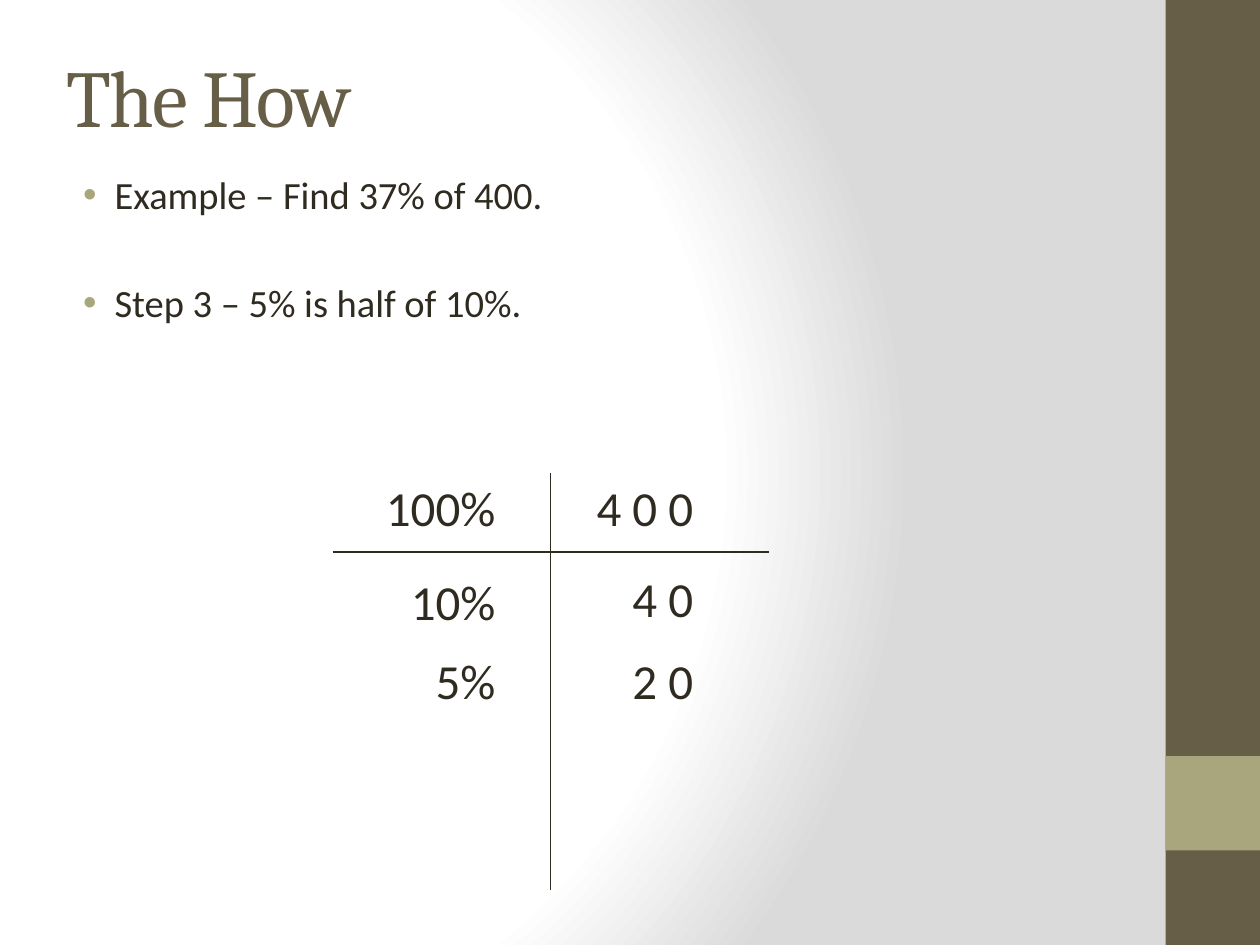
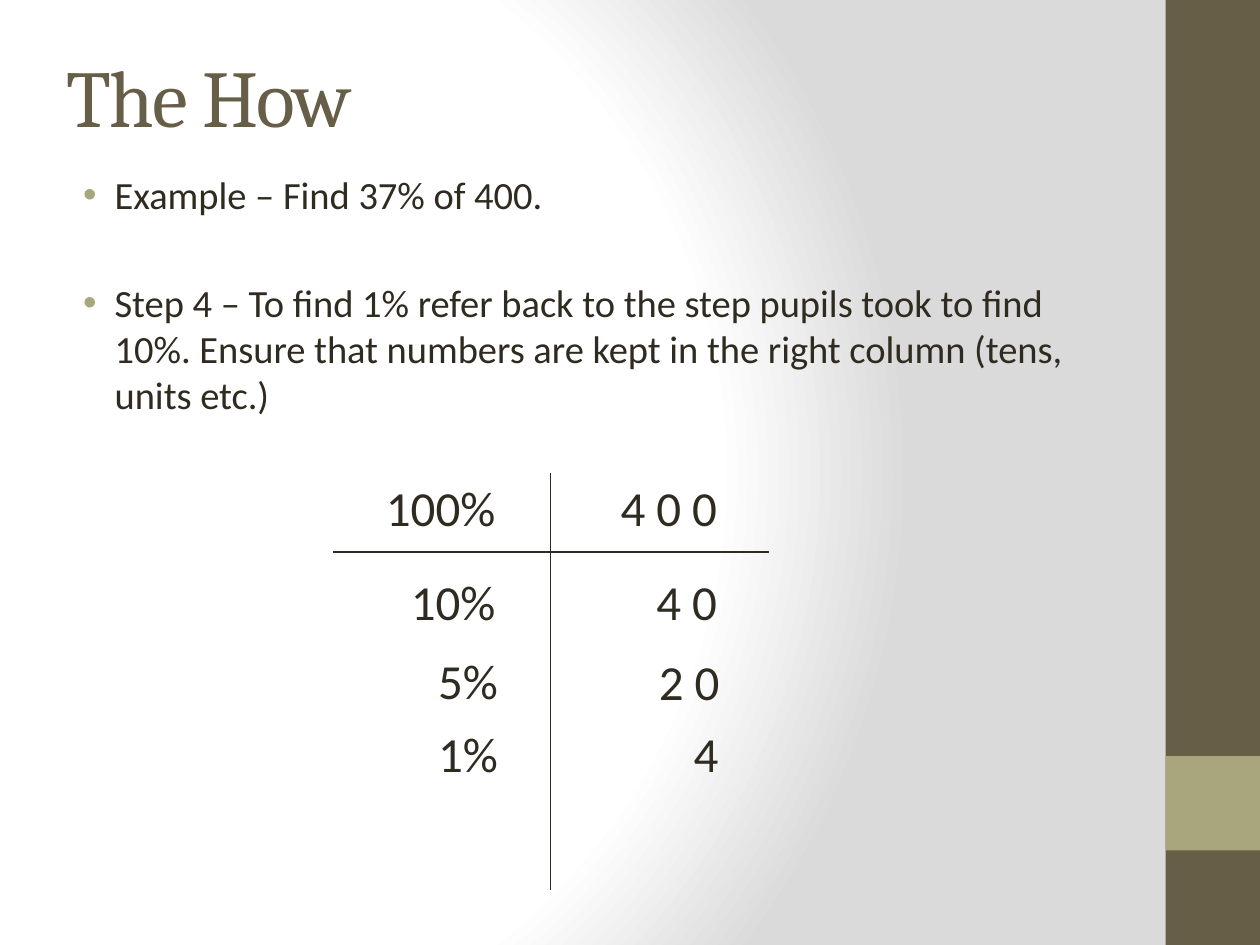
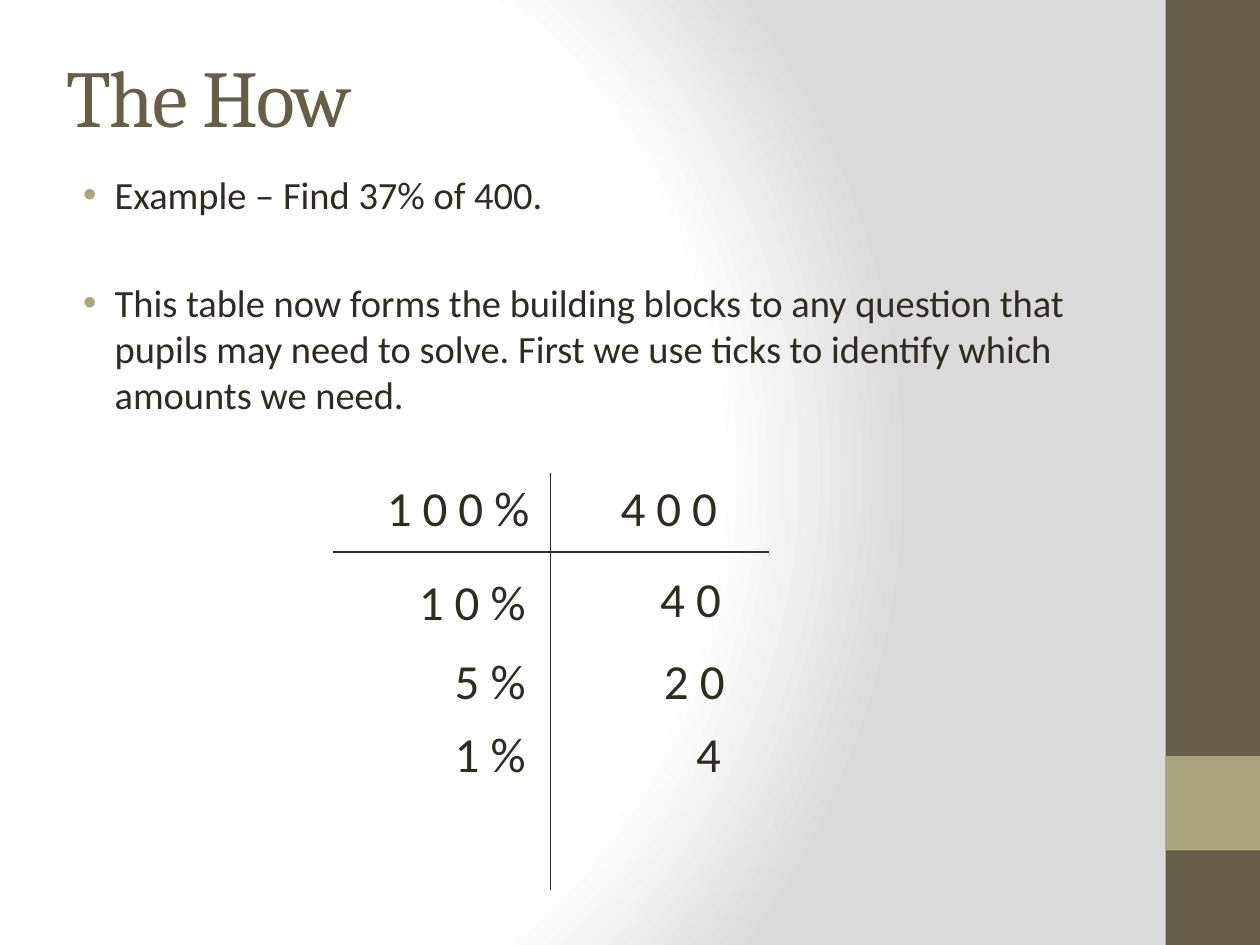
from lxml import etree
from pptx import Presentation
from pptx import util as u
from pptx.dml.color import RGBColor
from pptx.enum import shapes, text
from pptx.oxml import ns, parse_xml

BROWN = RGBColor(0x67, 0x5E, 0x47)
KHAKI = RGBColor(0xA9, 0xA5, 0x7C)
INK = RGBColor(0x2F, 0x2B, 0x20)
WHITE = RGBColor(0xFF, 0xFF, 0xFF)
GREY = RGBColor(0xDA, 0xDA, 0xDA)

WIDTH, HEIGHT = u.Inches(10), u.Inches(7.5)
COLUMNS, ROWS = 100, 75

# Glyph widths in columns at the size of the table figures
FIGURE_SIZE = 28
GLYPHS = {" ": 0.88, "%": 2.78}
DIGIT = 1.97
MARGINS = 2

ROW_TOPS = (37.4, 44.9, 51.1, 56.9)
ROW_HEIGHT = 5.7

EXAMPLE = "Example – Find 37% of 400."
# Each row: percentage, its right edge, amount, its right edge, lift of the amount
LESSONS = [
    ("Step 3 – 5% is half of 10%.",
     [("100%", 40.3, "4 0 0", 56, 0),
      ("10%", 40.3, "4 0", 56, 0.3),
      ("5%", 40.3, "2 0", 56, 0)]),
    ("Step 4 – To find 1% refer back to the step pupils took to find 10%. "
     "Ensure that numbers are kept in the right column (tens, units etc.)",
     [("100%", 40.3, "4 0 0", 57.9, 0),
      ("10%", 40.3, "4 0", 57.9, 0),
      ("5%", 40.5, "2 0", 58.1, -0.1),
      ("1%", 40.5, "4", 58, 0)]),
    ("This table now forms the building blocks to any question that pupils "
     "may need to solve. First we use ticks to identify which amounts we need.",
     [("1 0 0 %", 43, "4 0 0", 57.9, 0),
      ("1 0 %", 42.7, "4 0", 58.2, 0.3),
      ("5 %", 42.7, "2 0", 58.5, 0),
      ("1 %", 42.7, "4", 58.2, 0)]),
]


class Lesson:
    """The deck's style and the page being filled, measured in grid cells."""

    def __init__(self):
        self.deck = Presentation()
        self.deck.slide_width, self.deck.slide_height = WIDTH, HEIGHT
        self.page = None
        self.paint_background()

    def grid(self, *lengths):
        """Turn alternating columns and rows into slide lengths."""
        cells = (WIDTH / COLUMNS, HEIGHT / ROWS)
        return [u.Emu(round(n * cells[i % 2])) for i, n in enumerate(lengths)]

    def paint_background(self):
        fill = self.deck.slide_master.background.fill
        fill.solid()
        stops = "".join(
            f'<a:gs pos="{place * 1000}"><a:srgbClr val="{colour}"/></a:gs>'
            for place, colour in ((0, WHITE), (75, WHITE), (100, GREY)))
        gradient = parse_xml(
            f'<a:gradFill {ns.nsdecls("a")} rotWithShape="1"><a:gsLst>{stops}</a:gsLst>'
            '<a:path path="circle"><a:fillToRect l="20000" t="50000" '
            'r="100000" b="50000"/></a:path></a:gradFill>')
        solid = self.deck.slide_master.element.find(".//" + ns.qn("p:bgPr"))[0]
        solid.getparent().replace(solid, gradient)

    def new_page(self):
        self.page = self.deck.slides.add_slide(self.deck.slide_layouts[1])
        self.band(0, ROWS, BROWN)
        self.band(60, 7.5, KHAKI)

    def band(self, top, height, colour):
        box = self.page.shapes.add_shape(
            shapes.MSO_SHAPE.RECTANGLE, *self.grid(92.5, top, 7.5, height))
        box.shadow.inherit = False
        box.fill.solid()
        box.fill.fore_color.rgb = colour
        box.line.fill.background()

    def place(self, box, *cells):
        box.left, box.top, box.width, box.height = self.grid(*cells)

    def set_text(self, para, words, font, size, colour):
        para.text = words
        for span in para.runs:
            span.font.name = font
            span.font.size = u.Pt(size)
            span.font.color.rgb = colour

    def title(self, words):
        box = self.page.shapes.title
        self.place(box, 4.3, 1.3, 83.3, 12.5)
        frame = box.text_frame
        frame.auto_size = text.MSO_AUTO_SIZE.NONE
        frame.vertical_anchor = text.MSO_ANCHOR.MIDDLE
        para = frame.paragraphs[0]
        self.set_text(para, words, "Cambria", 46, BROWN)
        para.alignment = text.PP_ALIGN.LEFT
        para.runs[0].font._element.set("spc", "-100")

    def bullets(self, lines):
        box = self.page.placeholders[1]
        self.place(box, 4.3, 13.1, 83.3, 19.2)
        frame = box.text_frame
        frame.text = "\n".join(lines)
        frame.auto_size = text.MSO_AUTO_SIZE.NONE
        for index, para in enumerate(frame.paragraphs):
            self.set_text(para, lines[index], "Calibri", 22, INK)
            properties = para._p.get_or_add_pPr()
            properties.set("marL", str(u.Inches(0.38)))
            properties.set("indent", str(u.Inches(-0.25)))
            colour = etree.SubElement(properties, ns.qn("a:buClr"))
            etree.SubElement(colour, ns.qn("a:srgbClr"), val=str(KHAKI))
            if index:
                para.space_before = u.Pt(35)

    def rule(self, *ends):
        line = self.page.shapes.add_connector(
            shapes.MSO_CONNECTOR.STRAIGHT, *self.grid(*ends))
        line.line.color.rgb = INK
        line.line.width = u.Pt(1)
        etree.SubElement(line._element.spPr, ns.qn("a:effectLst"))

    def figure(self, words, right, top):
        """Set a figure that ends at the given right edge."""
        width = MARGINS + sum(GLYPHS.get(sign, DIGIT) for sign in words)
        box = self.page.shapes.add_textbox(
            *self.grid(right - width, top, width, ROW_HEIGHT))
        frame = box.text_frame
        frame.word_wrap = False
        frame.auto_size = text.MSO_AUTO_SIZE.SHAPE_TO_FIT_TEXT
        para = frame.paragraphs[0]
        self.set_text(para, words, "Calibri", FIGURE_SIZE, INK)
        para.alignment = text.PP_ALIGN.RIGHT

    def percent_table(self, rows):
        self.rule(26.4, 43.8, 61, 43.8)
        self.rule(43.7, 37.5, 43.7, 70.6)
        for top, (percent, percent_edge, amount, amount_edge, lift) in zip(ROW_TOPS, rows):
            self.figure(percent, percent_edge, top)
            self.figure(amount, amount_edge, top - lift)


def main():
    lesson = Lesson()
    for step, rows in LESSONS:
        lesson.new_page()
        lesson.title("The How")
        lesson.bullets([EXAMPLE, step])
        lesson.percent_table(rows)
    lesson.deck.save("out.pptx")


if __name__ == "__main__":
    main()
